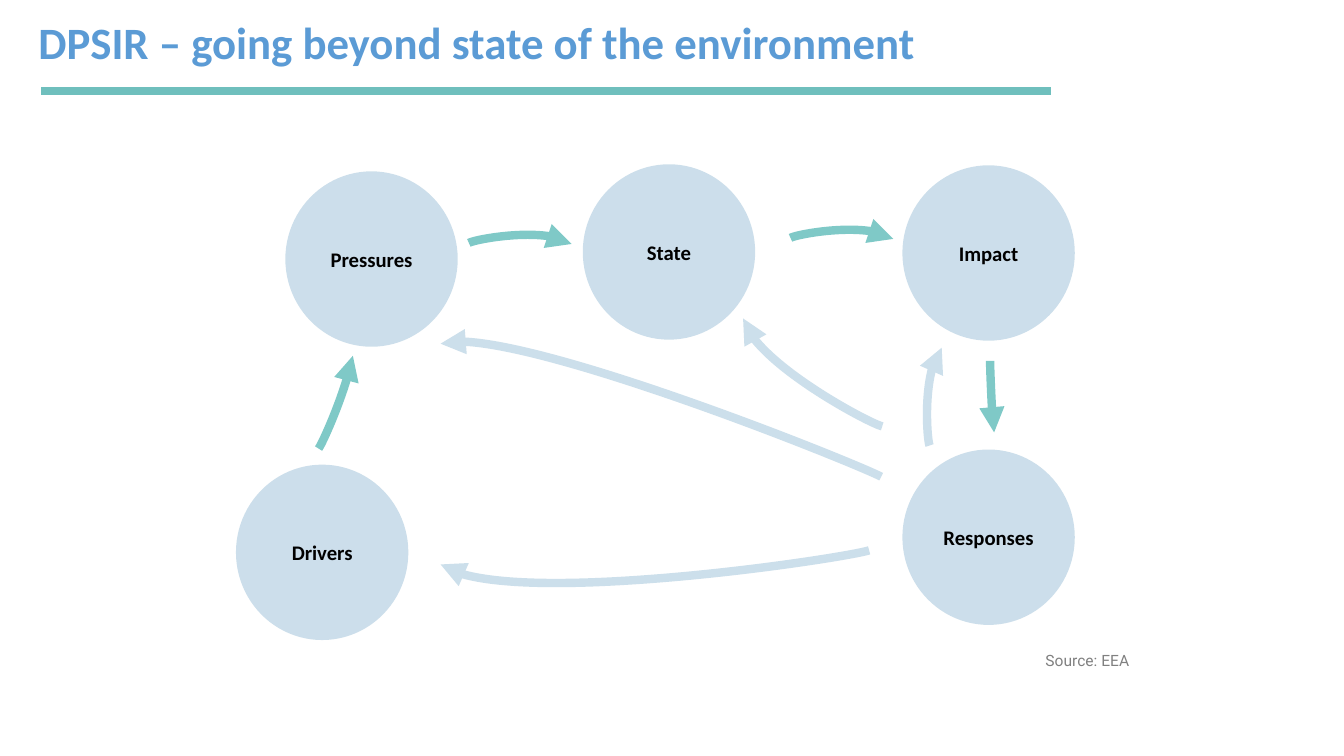
from dataclasses import dataclass

from lxml.etree import SubElement
from pptx import Presentation
from pptx.dml.color import RGBColor
from pptx.enum.shapes import MSO_CONNECTOR, MSO_SHAPE
from pptx.enum.text import MSO_ANCHOR, MSO_AUTO_SIZE, PP_ALIGN
from pptx.oxml.ns import qn
from pptx.shapes.autoshape import Shape
from pptx.slide import Slide
from pptx.text.text import TextFrame
from pptx.util import Inches, Pt

COLORS = {
    "title": "5B9BD5",
    "rule": "6FBFBD",
    "circle": "005E9B",
    "cause": "019491",
    "response": "CCDFEB",
    "label": "000000",
    "source": "808080",
}
CIRCLE_WIDTH, CIRCLE_HEIGHT = 1.71, 1.74
Point = tuple[float, float]


@dataclass(frozen=True)
class Stage:
    """A labelled circle with its top left corner in inches."""

    label: str
    left: float
    top: float


@dataclass(frozen=True)
class Arrow:
    """A cubic curve whose arrowhead sits at the tip."""

    tip: Point
    near_tip: Point
    near_tail: Point
    tail: Point
    color: str
    opacity: int = 100


STAGES = [
    Stage("Drivers", 2.34, 4.61),
    Stage("Pressures", 2.83, 1.7),
    Stage("State", 5.78, 1.63),
    Stage("Impact", 8.95, 1.64),
    Stage("Responses", 8.95, 4.46),
]
ARROWS = [
    Arrow((3.5, 3.53), (3.41, 3.95), (3.18, 4.43), (3.16, 4.45), "cause", 50),
    Arrow((5.67, 2.42), (5.41, 2.24), (4.7, 2.38), (4.65, 2.41), "cause", 50),
    Arrow((8.86, 2.37), (8.6, 2.19), (7.89, 2.33), (7.84, 2.36), "cause", 50),
    Arrow((9.86, 4.29), (9.84, 4.22), (9.82, 3.63), (9.82, 3.58), "cause", 50),
    Arrow((4.37, 5.6), (4.98, 6.05), (8.36, 5.54), (8.62, 5.46), "response"),
    Arrow((4.37, 3.41), (5.02, 3.2), (8.47, 4.59), (8.74, 4.73), "response"),
    Arrow((7.37, 3.16), (7.48, 3.6), (8.65, 4.21), (8.75, 4.23), "response"),
    Arrow((9.34, 3.45), (9.14, 3.7), (9.2, 4.38), (9.22, 4.42), "response"),
]


def write_text(frame: TextFrame, text: str, *, size: float, color: str,
               font: str = "Calibri", bold: bool = False,
               align: PP_ALIGN = PP_ALIGN.LEFT,
               anchor: MSO_ANCHOR = MSO_ANCHOR.TOP,
               left_inset: float = 0.1, right_inset: float = 0.1,
               spacing: float = 1.0) -> None:
    """Fill a text frame with one formatted paragraph."""
    frame.word_wrap = True
    frame.auto_size = MSO_AUTO_SIZE.NONE
    frame.vertical_anchor = anchor
    frame.margin_left, frame.margin_right = Inches(left_inset), Inches(right_inset)
    frame.margin_top = frame.margin_bottom = Inches(0.05)
    para = frame.paragraphs[0]
    para.alignment = align
    para.line_spacing = spacing
    para.space_before = Pt(0)
    span = para.add_run()
    span.text = text
    span.font.name = font
    span.font.size = Pt(size)
    span.font.bold = bold
    span.font.color.rgb = RGBColor.from_string(COLORS[color])


def set_opacity(shape: Shape, percent: int) -> None:
    """Set the opacity of the first solid colour of a shape."""
    color = next(shape.fill._xPr.iter(qn("a:srgbClr")))
    SubElement(color, qn("a:alpha"), val=str(percent * 1000))


def add_title(page: Slide) -> None:
    """Place the heading and the rule below it."""
    title = page.shapes.title
    title.left, title.top = Inches(0.28), Inches(0.1)
    title.width, title.height = Inches(9.7), Inches(0.64)
    write_text(title.text_frame, "DPSIR – going beyond state of the environment",
               size=32, color="title", bold=True)
    rule = page.shapes.add_connector(MSO_CONNECTOR.STRAIGHT, Inches(0.41), Inches(0.9),
                                     Inches(10.42), Inches(0.9))
    rule.line.color.rgb = RGBColor.from_string(COLORS["rule"])
    rule.line.width = Pt(6)
    SubElement(rule._element.spPr, qn("a:effectLst"))


def add_stage(page: Slide, stage: Stage) -> None:
    """Draw one labelled circle."""
    circle = page.shapes.add_shape(MSO_SHAPE.OVAL, Inches(stage.left), Inches(stage.top),
                                   Inches(CIRCLE_WIDTH), Inches(CIRCLE_HEIGHT))
    circle.shadow.inherit = False
    circle.fill.solid()
    circle.fill.fore_color.rgb = RGBColor.from_string(COLORS["circle"])
    set_opacity(circle, 20)
    circle.line.fill.background()
    write_text(circle.text_frame, stage.label, size=14.8, color="label", bold=True,
               align=PP_ALIGN.CENTER, anchor=MSO_ANCHOR.MIDDLE,
               left_inset=0, right_inset=0)


def add_arrow(page: Slide, arrow: Arrow) -> None:
    """Draw one curved arrow as a cubic outline with a head at its start."""
    tip, *others = [(Inches(x), Inches(y)) for x, y in
                    (arrow.tip, arrow.near_tip, arrow.near_tail, arrow.tail)]
    builder = page.shapes.build_freeform(*tip)
    builder.add_line_segments(others, close=False)
    curve = builder.convert_to_shape()
    curve.shadow.inherit = False
    segments = list(curve._element.iter(qn("a:lnTo")))
    cubic = SubElement(segments[0].getparent(), qn("a:cubicBezTo"))
    for segment in segments:
        cubic.append(segment[0])
        segment.getparent().remove(segment)
    curve.fill.background()
    curve.line.color.rgb = RGBColor.from_string(COLORS[arrow.color])
    curve.line.width = Pt(6)
    if arrow.opacity < 100:
        set_opacity(curve, arrow.opacity)
    SubElement(curve._element.spPr.find(qn("a:ln")), qn("a:headEnd"), type="triangle")


def add_source(page: Slide) -> None:
    """Write the source line at the lower right."""
    box = page.shapes.add_textbox(Inches(2.14), Inches(6.37), Inches(9.16), Inches(0.32))
    write_text(box.text_frame, "Source: EEA", size=11.1, color="source", font="Roboto",
               align=PP_ALIGN.RIGHT, left_inset=0, spacing=1.2)


def main() -> None:
    """Build the slide and save it."""
    deck = Presentation()
    deck.slide_width, deck.slide_height = Inches(13.33), Inches(7.5)
    page = deck.slides.add_slide(deck.slide_layouts[5])
    add_title(page)
    for stage in STAGES:
        add_stage(page, stage)
    for arrow in ARROWS:
        add_arrow(page, arrow)
    add_source(page)
    deck.save("out.pptx")


if __name__ == "__main__":
    main()
